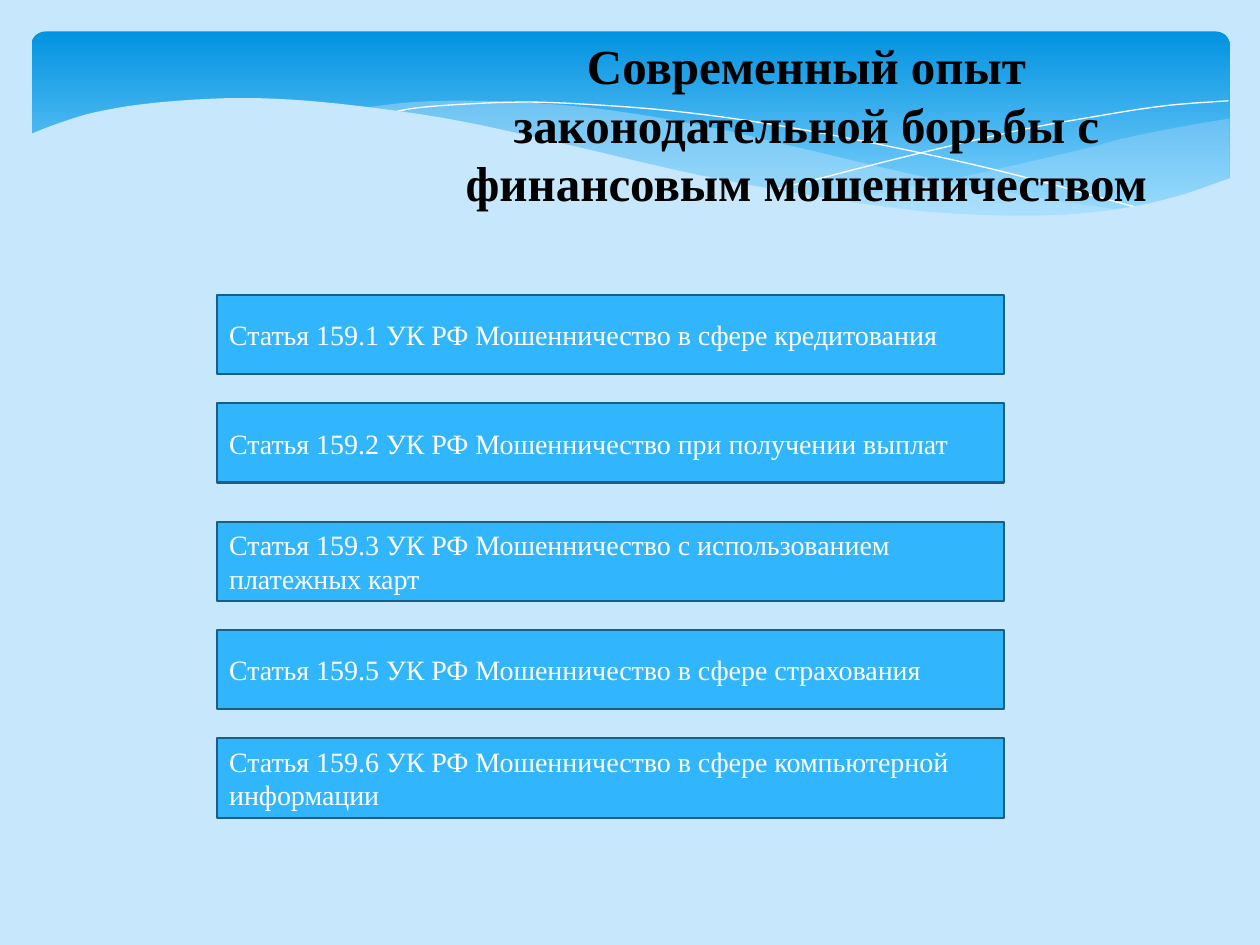
import dataclasses

import pptx
import pptx.dml.color
import pptx.enum.shapes
import pptx.enum.text
import pptx.oxml
import pptx.oxml.ns
import pptx.util

Inches = pptx.util.Inches
Pt = pptx.util.Pt
ALIGN = pptx.enum.text.PP_ALIGN
ANCHOR = pptx.enum.text.MSO_ANCHOR
PRESET = pptx.enum.shapes.MSO_SHAPE


@dataclasses.dataclass(frozen=True)
class Theme:
    """Colours, font and type sizes of the slide."""
    sky: str = "C6E7FC"
    banner_top: str = "0293E0"
    banner_bottom: str = "83D3FE"
    article: str = "31B6FD"
    outline: str = "195F84"
    white: str = "FFFFFF"
    black: str = "000000"
    font: str = "Times New Roman"
    title_size: int = 28
    article_size: int = 16


THEME = Theme()

TITLE = "Современный опыт законодательной борьбы с финансовым мошенничеством"
ARTICLES = [
    "Статья 159.1 УК РФ Мошенничество в сфере кредитования",
    "Статья 159.2 УК РФ Мошенничество при получении выплат",
    "Статья 159.3 УК РФ Мошенничество с использованием платежных карт",
    "Статья 159.5 УК РФ Мошенничество в сфере страхования",
    "Статья 159.6 УК РФ Мошенничество в сфере компьютерной информации",
]

RIGHT_CREST = [(9.51, 0.69), (9.1, 0.76), (8.66, 0.85), (8.36, 0.93), (7.54, 1.12),
               (6.81, 1.27), (6.36, 1.35)]
RIGHT_TROUGH = [(6.36, 1.35), (6.94, 1.43), (7.44, 1.47), (7.89, 1.47), (8.38, 1.45),
                (8.8, 1.38), (9.17, 1.29), (9.51, 1.16)]
MIDDLE_CREST = [(8.68, 1.42), (8.12, 1.34), (7.16, 1.17), (6.04, 0.91), (5.44, 0.77),
                (4.77, 0.65), (4.17, 0.58), (3.55, 0.55), (3.03, 0.56), (2.61, 0.61)]
MIDDLE_TROUGH = [(2.61, 0.61), (3.17, 0.69), (3.79, 0.81), (4.24, 0.91), (5.41, 1.18),
                 (6.09, 1.31), (6.7, 1.4), (7.23, 1.45), (7.71, 1.48), (8.13, 1.47),
                 (8.51, 1.44), (8.68, 1.42)]
FALLING_LINE = [(2.84, 0.65), (3.03, 0.61), (3.38, 0.58), (3.91, 0.56), (4.44, 0.58),
                (5.08, 0.63), (5.83, 0.73), (6.7, 0.89), (7.7, 1.11), (8.82, 1.41)]
RISING_LINE = [(5.88, 1.26), (6.28, 1.16), (6.95, 0.99), (7.81, 0.79), (8.41, 0.68),
               (8.99, 0.59), (9.5, 0.55)]
SHORE = [(9.52, 1.16), (9.15, 1.29), (8.74, 1.39), (8.25, 1.45), (7.68, 1.46),
         (7.01, 1.42), (6.23, 1.31), (5.3, 1.14), (4.22, 0.89), (3.4, 0.71),
         (2.67, 0.6), (2.05, 0.54), (1.52, 0.53), (0.94, 0.57), (0.51, 0.64),
         (0.21, 0.73), (-0.02, 0.82)]
SHORE_BASE = [(-0.02, 1.99), (9.52, 1.99)]


def rgb(code):
    """Return the colour object for a hex code."""
    return pptx.dml.color.RGBColor.from_string(code)


def smooth(knots, steps=5):
    """Return points on a Catmull-Rom curve through the knots."""
    padded = [knots[0], *knots, knots[-1]]
    points = [knots[0]]
    for a, b, c, d in zip(padded, padded[1:], padded[2:], padded[3:]):
        for step in range(1, steps + 1):
            t = step / steps
            points.append(tuple(
                q + t / 2 * (r - p + t * (2 * p - 5 * q + 4 * r - s + t * (3 * (q - r) + s - p)))
                for p, q, r, s in zip(a, b, c, d)))
    return points


def write(shape, text, *, size, color, bold=False, align=ALIGN.LEFT, anchor=ANCHOR.TOP):
    """Put formatted text into a shape."""
    frame = shape.text_frame
    frame.word_wrap = True
    frame.vertical_anchor = anchor
    paragraph = frame.paragraphs[0]
    paragraph.alignment = align
    run = paragraph.add_run()
    run.text = text
    run.font.name = THEME.font
    run.font.size = Pt(size)
    run.font.bold = bold
    run.font.color.rgb = rgb(color)


def add_wave(slide, left, top, points, *, fill=None, opacity=100, line=None):
    """Draw a filled wave or an open wave line from points in inches."""
    places = [(left + Inches(x), top + Inches(y)) for x, y in points]
    builder = slide.shapes.build_freeform(*places[0])
    builder.add_line_segments(places[1:], close=fill is not None)
    wave = builder.convert_to_shape()
    wave.shadow.inherit = False
    if fill:
        wave.fill.solid()
        wave.fill.fore_color.rgb = rgb(fill)
        tint = wave.fill._xPr.find(".//" + pptx.oxml.ns.qn("a:srgbClr"))
        alpha = pptx.oxml.parse_xml(
            f'<a:alpha {pptx.oxml.ns.nsdecls("a")} val="{opacity * 1000}"/>')
        tint.append(alpha)
    else:
        wave.fill.background()
    if line:
        wave.line.color.rgb = rgb(line)
        wave.line.width = Pt(0)
    else:
        wave.line.fill.background()


def add_banner(slide, left, top, width, height):
    """Draw the gradient banner with its waves."""
    banner = slide.shapes.add_shape(PRESET.ROUNDED_RECTANGLE, left, top, width, height)
    banner.adjustments[0] = 0.07
    banner.shadow.inherit = False
    banner.line.fill.background()
    banner.fill.gradient()
    banner.fill.gradient_angle = 270
    stops = [(0, THEME.banner_top), (0.9, THEME.banner_bottom)]
    for stop, (position, color) in zip(banner.fill.gradient_stops, stops):
        stop.position = position
        stop.color.rgb = rgb(color)
    for crest, trough, opacity in [(RIGHT_CREST, RIGHT_TROUGH, 29),
                                   (MIDDLE_CREST, MIDDLE_TROUGH, 40)]:
        add_wave(slide, left, top, smooth(crest) + smooth(trough),
                 fill=THEME.sky, opacity=opacity)
    for knots in (FALLING_LINE, RISING_LINE):
        add_wave(slide, left, top, smooth(knots), line=THEME.white)
    add_wave(slide, left, top, smooth(SHORE) + SHORE_BASE, fill=THEME.sky)


def add_title(slide, left, top, width, height):
    """Write the slide title."""
    title = slide.shapes.add_textbox(left, top, width, height)
    write(title, TITLE, size=THEME.title_size, color=THEME.black, bold=True,
          align=ALIGN.CENTER)


def add_articles(slide, left, top, width, height):
    """Stack the article bars, with a wider gap after the second."""
    bar_height, extra_gap = Inches(0.63), Inches(0.08)
    pitch = (height - bar_height - extra_gap) // (len(ARTICLES) - 1)
    for index, article in enumerate(ARTICLES):
        bar_top = top + index * pitch + (extra_gap if index >= 2 else 0)
        bar = slide.shapes.add_shape(PRESET.RECTANGLE, left, bar_top, width, bar_height)
        bar.shadow.inherit = False
        bar.fill.solid()
        bar.fill.fore_color.rgb = rgb(THEME.article)
        bar.line.color.rgb = rgb(THEME.outline)
        bar.line.width = Pt(1.25)
        write(bar, article, size=THEME.article_size, color=THEME.white,
              anchor=ANCHOR.MIDDLE)


def main():
    """Build the slide and save it."""
    deck = pptx.Presentation()
    deck.slide_width, deck.slide_height = Inches(10), Inches(7.5)
    slide = deck.slides.add_slide(deck.slide_layouts[6])
    slide.background.fill.solid()
    slide.background.fill.fore_color.rgb = rgb(THEME.sky)
    add_banner(slide, Inches(0.25), Inches(0.25), Inches(9.51), Inches(1.56))
    add_title(slide, Inches(3.03), Inches(0.23), Inches(6.74), Inches(1.51))
    add_articles(slide, Inches(1.72), Inches(2.34), Inches(6.25), Inches(4.15))
    deck.save("out.pptx")


if __name__ == "__main__":
    main()
